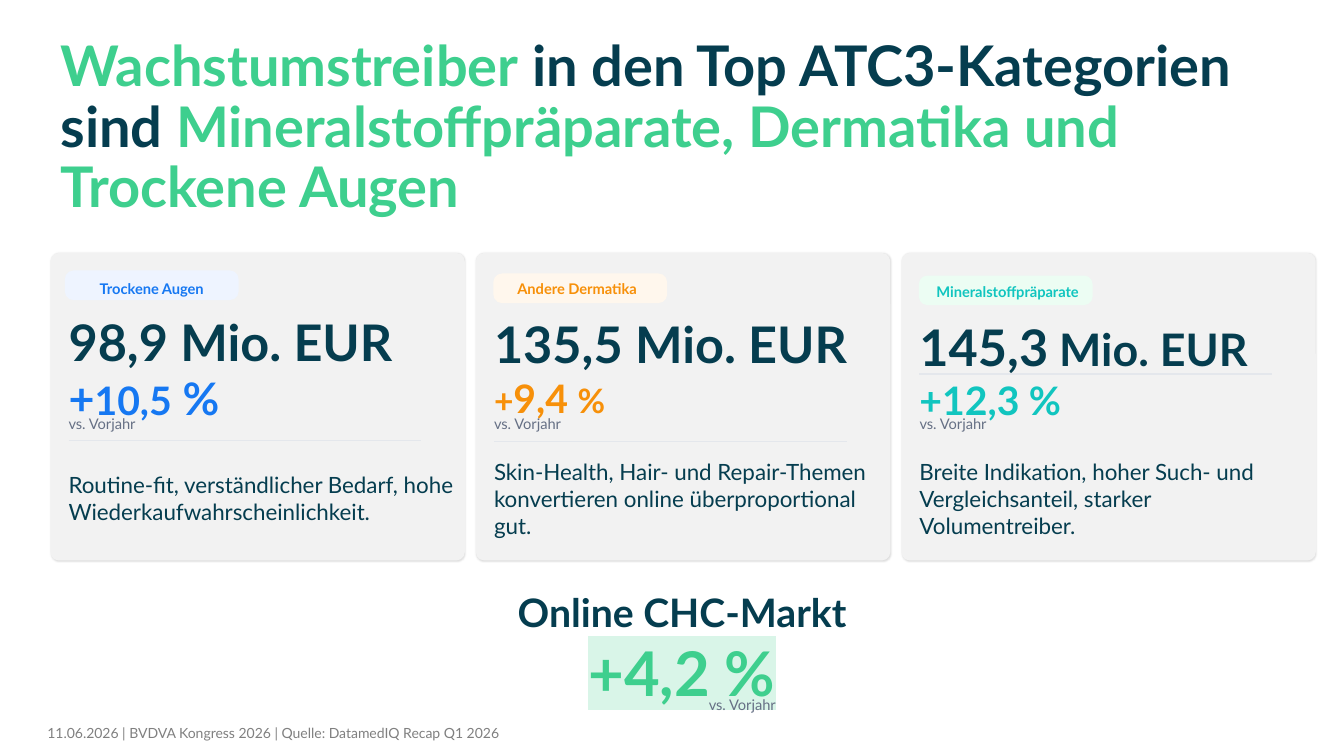
import dataclasses

import pptx
import pptx.dml.color
import pptx.enum.shapes
import pptx.enum.text
import pptx.oxml
import pptx.oxml.ns
import pptx.util
from pptx.util import Inches

FONT = "Lato"
NAVY, GREEN, SLATE = "053D4F", "3ECF8E", "667085"
CARD_GREY, RULE_GREY, FOOTER_GREY = "F2F2F2", "E4E7EC", "808080"
DRAWING_NS = "http://schemas.openxmlformats.org/drawingml/2006/main"
ALIGN = pptx.enum.text.PP_ALIGN
ANCHOR = pptx.enum.text.MSO_ANCHOR


@dataclasses.dataclass
class Category:
    """Content of one card, with offsets in inches from the card corner."""
    name: str
    accent: str
    tint: str
    amount: list
    growth: list
    summary: str
    badge: tuple
    label: tuple
    amount_height: float
    growth_height: float
    rule_top: float


CATEGORIES = [
    Category("Trockene Augen", "1678F2", "EEF4FF", [("98,9 Mio. EUR", 36)],
             [("+", 32), ("10,5", 28), (" %", 32)],
             "Routine-fit, verständlicher Bedarf, hohe Wiederkaufwahrscheinlichkeit.",
             (0.15, 0.18), (0.14, 0.26), 0.35, 0.23, 1.86),
    Category("Andere Dermatika", "F79009", "FFF7ED", [("135,5 Mio. EUR", 36)],
             [("+", 24), ("9,4 ", 28), ("%", 24)],
             "Skin-Health, Hair- und Repair-Themen konvertieren online überproportional gut.",
             (0.18, 0.21), (0.14, 0.26), 0.39, 0.24, 1.87),
    Category("Mineralstoffpräparate", "11C5BF", "ECFDF3",
             [("145,3", 36), (" Mio. EUR", 32)], [("+12,3 %", 28)],
             "Breite Indikation, hoher Such- und Vergleichsanteil, starker Volumentreiber.",
             (0.18, 0.23), (0.19, 0.29), 0.46, 0.28, 1.2),
]


def rgb(value):
    """Turn a hex string into a colour."""
    return pptx.dml.color.RGBColor.from_string(value)


def add_spans(para, spans, bold=False):
    """Append (text, size, colour) spans to a paragraph."""
    for text, size, color in spans:
        span = para.add_run()
        span.text = text
        span.font.name = FONT
        span.font.size = pptx.util.Pt(size)
        span.font.bold = bold
        span.font.color.rgb = rgb(color)


def add_text(page, left, top, width, height, spans, bold=False, align=ALIGN.LEFT):
    """Add a middle-anchored text box without insets and return its frame."""
    box = page.shapes.add_textbox(Inches(left), Inches(top), Inches(width), Inches(height))
    frame = box.text_frame
    frame.word_wrap = True
    frame.vertical_anchor = ANCHOR.MIDDLE
    frame.margin_left = frame.margin_right = frame.margin_top = frame.margin_bottom = 0
    frame.paragraphs[0].alignment = align
    add_spans(frame.paragraphs[0], spans, bold)
    return frame


def add_panel(page, left, top, width, height, fill, radius):
    """Add a plain rounded rectangle."""
    panel = page.shapes.add_shape(
        pptx.enum.shapes.MSO_SHAPE.ROUNDED_RECTANGLE,
        Inches(left), Inches(top), Inches(width), Inches(height))
    panel.adjustments[0] = radius
    panel.shadow.inherit = False
    panel.fill.solid()
    panel.fill.fore_color.rgb = rgb(fill)
    panel.line.fill.background()
    return panel


def add_soft_shadow(shape):
    """Give a shape a faint shadow towards the lower right."""
    effects = shape._element.spPr.find(pptx.oxml.ns.qn("a:effectLst"))
    effects.append(pptx.oxml.parse_xml(
        f'<a:outerShdw xmlns:a="{DRAWING_NS}" blurRad="15240" dist="5080" dir="2700000">'
        '<a:srgbClr val="000000"><a:alpha val="12000"/></a:srgbClr></a:outerShdw>'))


def add_rule(page, left, top, width):
    """Add a thin horizontal divider."""
    rule = page.shapes.add_connector(
        pptx.enum.shapes.MSO_CONNECTOR.STRAIGHT,
        Inches(left), Inches(top), Inches(left + width), Inches(top))
    rule.line.color.rgb = rgb(RULE_GREY)
    rule.line.width = pptx.util.Pt(1)
    rule._element.spPr.append(pptx.oxml.parse_xml(f'<a:effectLst xmlns:a="{DRAWING_NS}"/>'))


def add_comparison(page, left, top):
    """Add the note naming the comparison period."""
    add_text(page, left, top, 1.51, 0.18, [("vs. Vorjahr", 10.5, SLATE)])


def add_title(page, left, top, width, height):
    """Place and colour the headline."""
    title = page.shapes.title
    title.left, title.top = Inches(left), Inches(top)
    title.width, title.height = Inches(width), Inches(height)
    frame = title.text_frame
    frame.word_wrap = True
    frame.auto_size = pptx.enum.text.MSO_AUTO_SIZE.NONE
    frame.vertical_anchor = ANCHOR.TOP
    para = frame.paragraphs[0]
    para.alignment = ALIGN.LEFT
    para.line_spacing = 0.9
    add_spans(para, [
        ("Wachstumstreiber", 40, GREEN),
        (" in den Top ATC3-Kategorien sind ", 40, NAVY),
        ("Mineralstoffpräparate, Dermatika und Trockene Augen", 40, GREEN)], bold=True)


def add_card(page, left, top, width, height, category):
    """Draw one category card in the given box."""
    add_soft_shadow(add_panel(page, left, top, width, height, CARD_GREY, 0.027))
    badge_x, badge_y = category.badge
    badge = add_panel(page, left + badge_x, top + badge_y, 1.71, 0.28, category.tint, 0.286)
    badge.line.color.rgb = rgb(category.tint)
    badge.line.width = pptx.util.Pt(1)
    label_x, label_y = category.label
    add_text(page, left + label_x, top + label_y, 1.73, 0.18,
             [(category.name, 10.5, category.accent)], bold=True, align=ALIGN.CENTER)
    inner = left + 0.18
    add_text(page, inner, top + 0.7, 3.86, category.amount_height,
             [(text, size, NAVY) for text, size in category.amount], bold=True)
    add_text(page, inner, top + 1.32, 1.96, category.growth_height,
             [(text, size, category.accent) for text, size in category.growth], bold=True)
    add_comparison(page, inner, top + 1.6)
    add_rule(page, inner, top + category.rule_top, 3.5)
    add_text(page, inner, top + 2.01, 3.86, 0.85, [(category.summary, 16, NAVY)])


def add_market_total(page, left, top, width, height):
    """Show the growth of the whole market with a highlighted figure."""
    frame = add_text(page, left, top, width, height,
                     [("Online CHC-Markt", 28, NAVY)], bold=True, align=ALIGN.CENTER)
    para = frame.add_paragraph()
    para.alignment = ALIGN.CENTER
    add_spans(para, [("+4,2 %", 44, GREEN)], bold=True)
    fill = para.runs[0].font._element.find(pptx.oxml.ns.qn("a:solidFill"))
    fill.addnext(pptx.oxml.parse_xml(
        f'<a:highlight xmlns:a="{DRAWING_NS}"><a:srgbClr val="D9F5E8"/></a:highlight>'))
    add_comparison(page, left + 2.33, top + 1.07)


def add_footer(page, left, top, width, height):
    """Add the date and source line."""
    add_text(page, left + 0.1, top, width - 0.2, height, [
        ("11.06.2026 | BVDVA Kongress 2026 | Quelle: DatamedIQ Recap Q1 2026", 10, FOOTER_GREY)])


def main():
    """Build the slide and save the deck."""
    deck = pptx.Presentation()
    deck.slide_width, deck.slide_height = Inches(13.33), Inches(7.5)
    page = deck.slides.add_slide(deck.slide_layouts[5])
    add_title(page, 0.5, 0.33, 12.5, 1.25)
    for index, category in enumerate(CATEGORIES):
        add_card(page, 0.5 + index * 4.22, 2.51, 4.11, 3.05, category)
    add_market_total(page, 4.7, 5.83, 4.13, 1.21)
    add_footer(page, 0.37, 7.14, 11.14, 0.27)
    deck.save("out.pptx")


if __name__ == "__main__":
    main()
